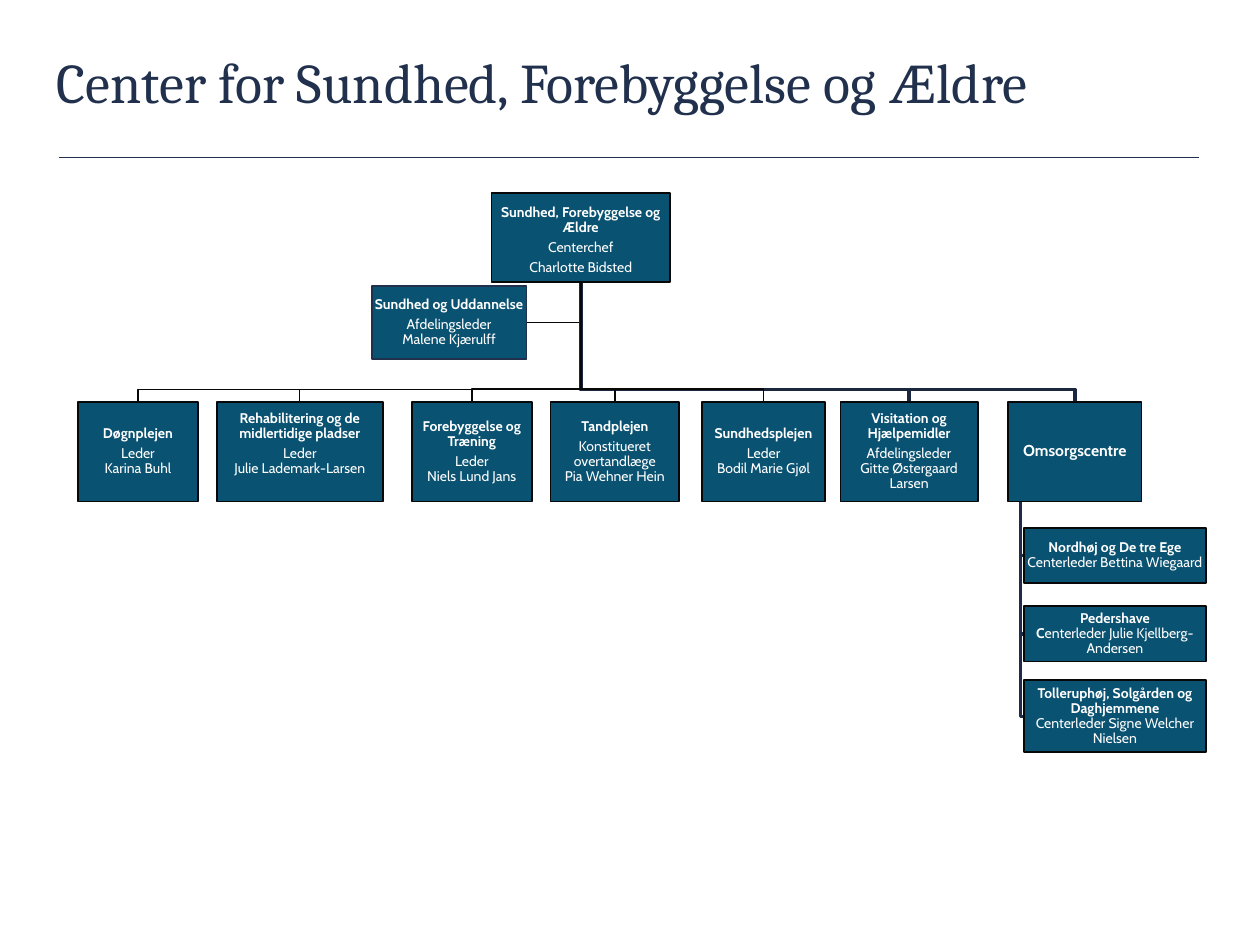
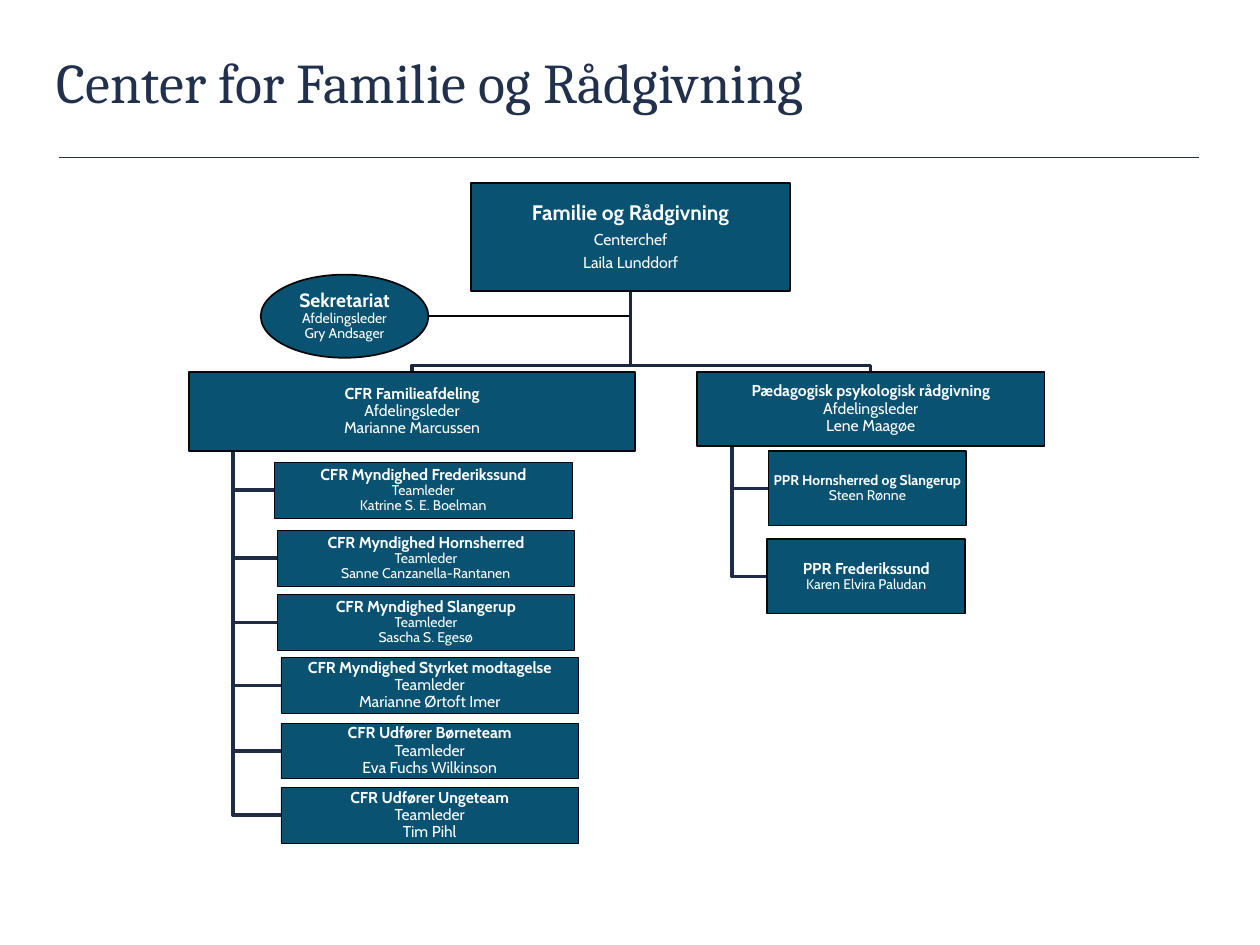
from copy import deepcopy
from dataclasses import dataclass

from lxml import etree
from pptx import Presentation
from pptx.dml.color import RGBColor
from pptx.enum.shapes import MSO_CONNECTOR, MSO_SHAPE
from pptx.enum.text import MSO_ANCHOR, PP_ALIGN
from pptx.oxml.ns import qn
from pptx.util import Pt

PX = 9144  # 100 px to the inch

TEAL = RGBColor(0x0A, 0x52, 0x71)
NAVY = RGBColor(0x21, 0x31, 0x4D)
RAIL = RGBColor(0x1A, 0x27, 0x3E)
SPINE = RGBColor(0x1E, 0x2C, 0x46)
BLACK = RGBColor(0x08, 0x08, 0x08)
WHITE = RGBColor(0xFF, 0xFF, 0xFF)

TITLE_FONT, BODY_FONT = "Cambria", "Cabin"
RECTANGLE, OVAL = MSO_SHAPE.RECTANGLE, MSO_SHAPE.OVAL
STRAIGHT = MSO_CONNECTOR.STRAIGHT
CENTER, MIDDLE = PP_ALIGN.CENTER, MSO_ANCHOR.MIDDLE


@dataclass
class Unit:
    """One box; text between asterisks is bold and takes name_size."""
    spot: tuple
    paragraphs: list
    name_size: int = 8
    detail_size: int = 8
    border: float = 1
    edge: RGBColor = BLACK
    wire: float = 2
    pad_top: int = 1
    pad_bottom: int = 1
    outline: int = RECTANGLE

    @property
    def middle(self):
        left, top, width, height = self.spot
        return left + width / 2, top + height / 2


def row_unit(left, width, paragraphs, **options):
    return Unit((left, 319, width, 79), paragraphs, **options)


def centre_unit(top, height, text):
    return Unit((813, top, 144, height), [text])


def team_unit(left, top, text, detail_size=8):
    return Unit((left, top, 236, 44), [text], 9, detail_size, border=0.25)


CHARTS = [
    {
        "title": "Center for Sundhed, Forebyggelse og Ældre",
        "head": Unit((390, 153, 142, 71),
                     ["*Sundhed, Forebyggelse og Ældre*", "Centerchef", "Charlotte Bidsted"],
                     pad_top=6),
        "staff": Unit((295, 227, 123, 58),
                      ["*Sundhed og Uddannelse*", "Afdelingsleder\nMalene Kjærulff"],
                      edge=NAVY),
        "rail": 309,
        "departments": [
            row_unit(62, 95, ["*Døgnplejen*", "Leder\nKarina Buhl"], wire=0.75),
            row_unit(172, 132, ["*Rehabilitering og de midlertidige pladser*",
                                "Leder\nJulie Lademark-Larsen"], wire=0.75, pad_bottom=13),
            row_unit(327, 95, ["*Forebyggelse og Træning*", "Leder\nNiels Lund Jans"], wire=1),
            row_unit(437, 102, ["*Tandplejen*",
                                "Konstitueret overtandlæge\nPia Wehner Hein"], wire=1),
            row_unit(557, 98, ["*Sundhedsplejen*", "Leder\nBodil Marie Gjøl"], wire=1),
            row_unit(667, 109, ["*Visitation og Hjælpemidler*",
                                "Afdelingsleder\nGitte Østergaard Larsen"]),
            row_unit(800, 106, ["*Omsorgscentre*"], name_size=9),
        ],
        # spine x, spine top, units beside it
        "spines": [
            (810, 398, [
                centre_unit(419, 44, "*Nordhøj og De tre Ege*\nCenterleder Bettina Wiegaard"),
                centre_unit(481, 44, "*Pedershave\nC*enterleder Julie Kjellberg-Andersen"),
                centre_unit(540, 57, "*Tolleruphøj, Solgården og Daghjemmene*\n"
                                     "Centerleder Signe Welcher Nielsen"),
            ]),
        ],
    },
    {
        "title": "Center for Familie og Rådgivning",
        "head": Unit((374, 145, 253, 86),
                     ["*Familie og Rådgivning*", "Centerchef", "Laila Lunddorf"], 12, 9),
        "staff": Unit((207, 218, 133, 66), ["*Sekretariat*\nAfdelingsleder\nGry Andsager"], 11,
                      pad_top=0, pad_bottom=0, outline=OVAL),
        "rail": 290,
        "departments": [
            Unit((150, 295, 354, 63),
                 ["*CFR Familieafdeling*\nAfdelingsleder\nMarianne Marcussen"], 9, 9),
            Unit((553, 295, 276, 59),
                 ["*Pædagogisk psykologisk rådgivning*\nAfdelingsleder\nLene Maagøe"], 9, 9),
        ],
        "spines": [
            (185, 358, [
                team_unit(218, 367, "*CFR Myndighed Frederikssund*\nTeamleder\n"
                                    "Katrine S. E. Boelman"),
                team_unit(220, 421, "*CFR Myndighed Hornsherred*\nTeamleder\n"
                                    "Sanne Canzanella-Rantanen"),
                team_unit(220, 472, "*CFR Myndighed Slangerup*\nTeamleder\nSascha S. Egesø"),
                team_unit(223, 522, "*CFR Myndighed Styrket modtagelse*\nTeamleder\n"
                                    "Marianne Ørtoft Imer", 9),
                team_unit(223, 574, "*CFR Udfører Børneteam*\nTeamleder\nEva Fuchs Wilkinson", 9),
                team_unit(223, 625, "*CFR Udfører Ungeteam*\nTeamleder\nTim Pihl", 9),
            ]),
            (581, 354, [
                Unit((610, 358, 157, 59), ["*PPR Hornsherred og Slangerup*\nSteen Rønne"]),
                Unit((609, 428, 157, 59), ["*PPR Frederikssund*\nKaren Elvira Paludan"], 9),
            ]),
        ],
    },
]


def scaled(*lengths):
    return [round(length * PX) for length in lengths]


def set_margins(frame, side, top, bottom):
    frame.margin_left = frame.margin_right = side * PX
    frame.margin_top, frame.margin_bottom = top * PX, bottom * PX


def format_font(font, name, size, color, bold=False):
    font.name, font.size, font.bold = name, Pt(size), bold
    font.color.rgb = color


def add_title(page, title):
    box = page.shapes.add_textbox(*scaled(45, 38, 907, 85))
    frame = box.text_frame
    frame.word_wrap = True
    set_margins(frame, 0, 0, 0)
    frame.text = title
    format_font(frame.paragraphs[0].runs[0].font, TITLE_FONT, 32, NAVY)
    divider = page.shapes.add_connector(STRAIGHT, *scaled(47, 125, 952, 125))
    divider.line.color.rgb, divider.line.width = NAVY, Pt(0.75)
    etree.SubElement(divider._element.spPr, qn("a:effectLst"))


def add_wire(page, points, color, weight):
    start, *rest = [scaled(*point) for point in points]
    builder = page.shapes.build_freeform(*start)
    builder.add_line_segments(rest, close=False)
    wire = builder.convert_to_shape()
    wire.shadow.inherit = False
    wire.fill.background()
    wire.line.color.rgb, wire.line.width = color, Pt(weight)


def write_paragraph(paragraph, text, unit):
    paragraph.alignment = CENTER
    paragraph.line_spacing = 0.9
    for index, part in enumerate(text.split("*")):
        bold = index % 2 == 1
        size = unit.name_size if bold else unit.detail_size
        for number, line in enumerate(part.split("\n")):
            if number:
                paragraph.add_line_break()
            if line:
                span = paragraph.add_run()
                span.text = line
                format_font(span.font, BODY_FONT, size, WHITE, bold)
    paragraph.space_after = Pt(0.35 * paragraph.runs[0].font.size.pt)
    # a line break keeps the size of the text before it
    for line_break in paragraph._p.findall(qn("a:br")):
        line_break.append(deepcopy(line_break.getprevious().find(qn("a:rPr"))))


def add_unit(page, unit):
    box = page.shapes.add_shape(unit.outline, *scaled(*unit.spot))
    box.shadow.inherit = False
    box.fill.solid()
    box.fill.fore_color.rgb = TEAL
    box.line.color.rgb, box.line.width = unit.edge, Pt(unit.border)
    frame = box.text_frame
    frame.word_wrap = True
    frame.vertical_anchor = MIDDLE
    set_margins(frame, 1, unit.pad_top, unit.pad_bottom)
    for index, text in enumerate(unit.paragraphs):
        paragraph = frame.add_paragraph() if index else frame.paragraphs[0]
        write_paragraph(paragraph, text, unit)


def add_chart_page(deck, chart):
    page = deck.slides.add_slide(deck.slide_layouts[6])
    head, staff, rail = chart["head"], chart["staff"], chart["rail"]
    trunk = head.middle[0]
    foot = head.spot[1] + head.spot[3]

    staff_right, staff_y = staff.spot[0] + staff.spot[2], staff.middle[1]
    add_wire(page, [(trunk, foot), (trunk, staff_y), (staff_right, staff_y)], BLACK, 1)
    units = [head, staff, *chart["departments"]]
    for spine, top, members in chart["spines"]:
        for unit in members:
            y = unit.middle[1]
            add_wire(page, [(spine, top), (spine, y), (unit.spot[0], y)], SPINE, unit.wire)
        units += members
    for unit in reversed(chart["departments"]):
        x = unit.middle[0]
        color = RAIL if unit.wire == 2 else BLACK
        add_wire(page, [(trunk, foot), (trunk, rail), (x, rail), (x, unit.spot[1])],
                 color, unit.wire)
    for unit in units:
        add_unit(page, unit)
    add_title(page, chart["title"])


def main():
    deck = Presentation()
    deck.slide_width, deck.slide_height = scaled(1000, 750)
    for chart in CHARTS:
        add_chart_page(deck, chart)
    deck.save("out.pptx")


if __name__ == "__main__":
    main()
